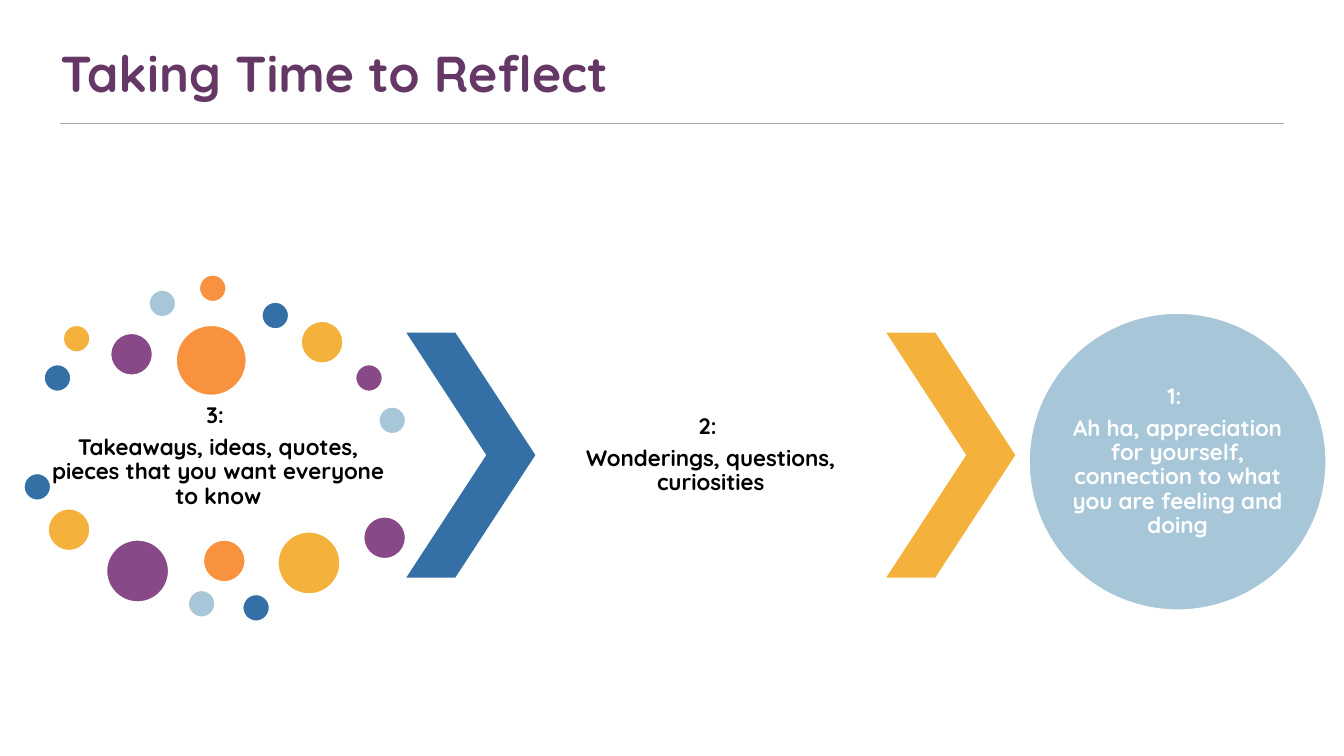
import pptx
import pptx.dml.color
import pptx.enum.shapes
import pptx.enum.text
import pptx.oxml.ns
import pptx.util
from lxml import etree

RGBColor = pptx.dml.color.RGBColor
SHAPE = pptx.enum.shapes.MSO_SHAPE
ALIGN = pptx.enum.text.PP_ALIGN
MIDDLE = pptx.enum.text.MSO_ANCHOR.MIDDLE

WHITE = RGBColor(0xFF, 0xFF, 0xFF)
BLACK = RGBColor(0x00, 0x00, 0x00)
PLUM = RGBColor(0x65, 0x37, 0x65)
GRAY = RGBColor(0xA6, 0xA6, 0xA6)
BLUE = RGBColor(0x34, 0x6F, 0xA5)
YELLOW = RGBColor(0xF4, 0xB2, 0x3D)
PURPLE = RGBColor(0x87, 0x49, 0x87)
SKY = RGBColor(0xA7, 0xC6, 0xD8)
ORANGE = RGBColor(0xF9, 0x92, 0x3E)

FONT = "Quicksand"
EMU_PER_PX = 9144
SMALL, MEDIUM, LARGE, HUGE = 28, 43, 63, 71
DOTS = [
    (20, 89, SMALL, BLUE), (39, 50, SMALL, YELLOW), (86, 58, MEDIUM, PURPLE),
    (124, 15, SMALL, SKY), (174, 0, SMALL, ORANGE), (236, 27, SMALL, BLUE),
    (275, 46, MEDIUM, YELLOW), (329, 89, SMALL, PURPLE), (352, 131, SMALL, SKY),
    (151, 50, HUGE, ORANGE), (0, 197, SMALL, BLUE), (24, 232, MEDIUM, YELLOW),
    (82, 263, LARGE, PURPLE), (163, 313, SMALL, SKY), (178, 263, MEDIUM, ORANGE),
    (217, 317, SMALL, BLUE), (252, 255, LARGE, YELLOW), (337, 240, MEDIUM, PURPLE),
]


def px(*lengths):
    """Turn pixel lengths into EMU."""
    return [pptx.util.Emu(length * EMU_PER_PX) for length in lengths]


def format_font(paragraph, size, color):
    """Give a paragraph the bold deck font."""
    paragraph.font.name = FONT
    paragraph.font.size = pptx.util.Pt(size)
    paragraph.font.bold = True
    paragraph.font.color.rgb = color


def set_frame(frame, side, vertical):
    """Wrap and centre a text frame vertically, with the given margins."""
    frame.word_wrap = True
    frame.auto_size = pptx.enum.text.MSO_AUTO_SIZE.NONE
    frame.vertical_anchor = MIDDLE
    frame.margin_left, frame.margin_right = px(side, side)
    frame.margin_top, frame.margin_bottom = px(vertical, vertical)


def add_header(slide, left, top, width, height):
    """Place the title and the rule below it."""
    title = slide.shapes.title
    title.left, title.top, title.width, title.height = px(left, top, width, height)
    title.text_frame.text = "Taking Time to Reflect"
    set_frame(title.text_frame, 0, 7)
    paragraph = title.text_frame.paragraphs[0]
    paragraph.alignment = ALIGN.LEFT
    format_font(paragraph, 36, PLUM)
    rule_top = top + height + 12
    rule = slide.shapes.add_connector(
        pptx.enum.shapes.MSO_CONNECTOR.STRAIGHT,
        *px(left, rule_top, left + width, rule_top))
    rule.line.color.rgb = GRAY
    rule.line.width = pptx.util.Pt(0.75)
    etree.SubElement(rule.element.spPr, pptx.oxml.ns.qn("a:effectLst"))


def add_prompt(slide, box, lines, color, margin=2):
    """Place a centred numbered prompt in a box."""
    frame = slide.shapes.add_textbox(*px(*box)).text_frame
    set_frame(frame, margin, margin)
    frame.text = "\n".join(lines)
    for paragraph in frame.paragraphs:
        paragraph.alignment = ALIGN.CENTER
        paragraph.line_spacing = 0.9
        paragraph.space_after = pptx.util.Pt(5.6)
        format_font(paragraph, 16, color)


def add_filled(slide, kind, box, color):
    """Place a flat filled shape without an outline."""
    shape = slide.shapes.add_shape(kind, *px(*box))
    shape.shadow.inherit = False
    shape.fill.solid()
    shape.fill.fore_color.rgb = color
    shape.line.fill.background()
    return shape


def add_circle(slide, left, top, size, color):
    """Place a circle with a white outline."""
    circle = add_filled(slide, SHAPE.OVAL, (left, top, size, size), color)
    circle.line.color.rgb = WHITE
    circle.line.width = pptx.util.Pt(2)


def add_takeaways(slide, left, top):
    """Place the third prompt inside its ring of dots."""
    add_prompt(slide, (left + 20, top + 124, 347, 114),
               ["3: ", "Takeaways, ideas, quotes, pieces that you want everyone to know"], BLACK)
    for across, down, size, color in DOTS:
        add_circle(slide, left + across, top + down, size, color)


def add_wonderings(slide, left, top, width, height):
    """Place the second prompt between two chevrons."""
    chevron_width = 128
    for chevron_left, color in ((left, BLUE), (left + width - chevron_width, YELLOW)):
        chevron = add_filled(slide, SHAPE.CHEVRON,
                             (chevron_left, top, chevron_width, height), color)
        chevron.adjustments[0] = 0.62
    add_prompt(slide, (left + chevron_width, top, width - 2 * chevron_width, height),
               ["2: ", "Wonderings, questions, curiosities"], BLACK)


def add_appreciation(slide, left, top, size):
    """Place the first prompt on a large circle."""
    add_circle(slide, left, top, size, SKY)
    inset = 43
    inner = size - 2 * inset
    add_prompt(slide, (left + inset, top + inset, inner, inner),
               ["1: ", "Ah ha, appreciation for yourself, connection to what "
                "you are feeling and doing"], WHITE, 0)


def main():
    """Build and save the slide."""
    presentation = pptx.Presentation()
    presentation.slide_width, presentation.slide_height = px(1333, 750)
    slide = presentation.slides.add_slide(presentation.slide_layouts[5])
    add_header(slide, 60, 33, 1213, 78)
    add_takeaways(slide, 23, 272)
    add_wonderings(slide, 403, 330, 604, 243)
    add_appreciation(slide, 1020, 310, 296)
    presentation.save("out.pptx")


if __name__ == "__main__":
    main()
